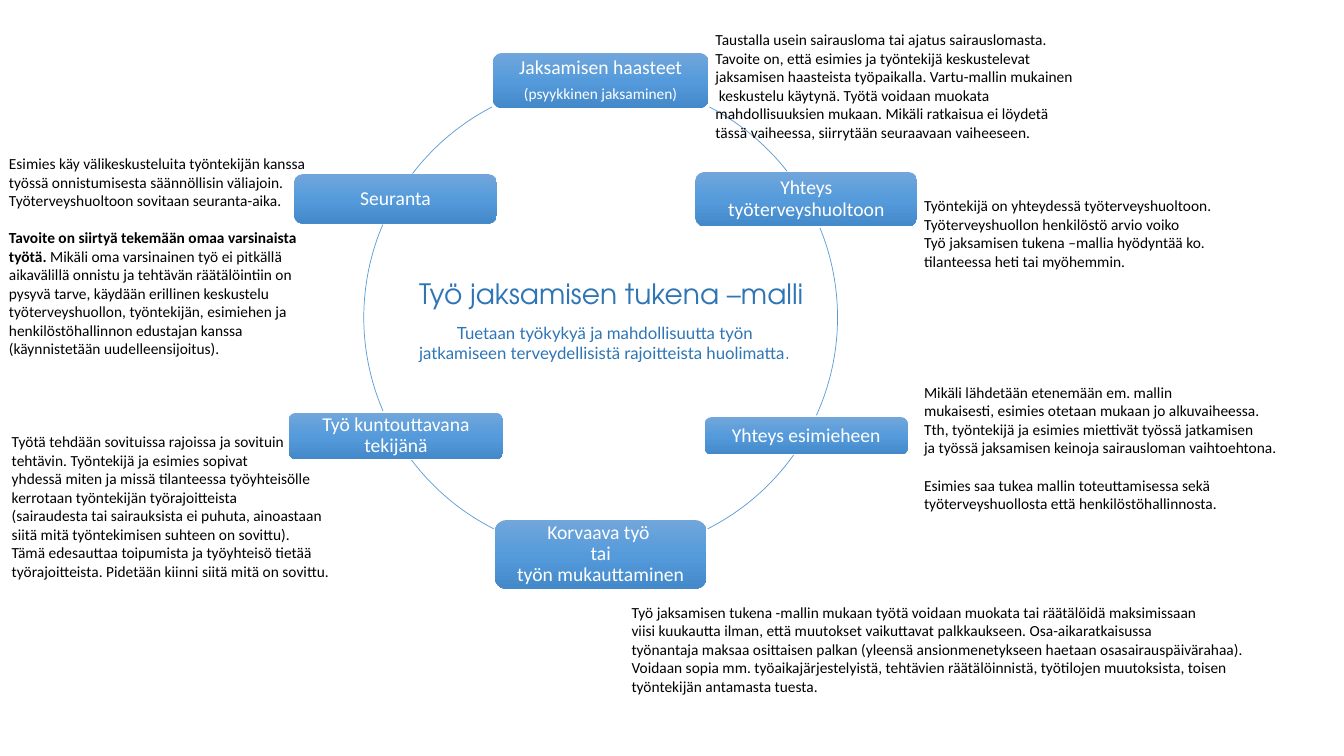
from copy import deepcopy
from dataclasses import dataclass

from lxml.etree import SubElement
from pptx import Presentation
from pptx.dml.color import RGBColor
from pptx.enum.shapes import MSO_SHAPE
from pptx.enum.text import MSO_ANCHOR, PP_ALIGN
from pptx.oxml.ns import qn
from pptx.util import Pt


@dataclass(frozen=True)
class Theme:
    gradient: tuple = ((0, "71A6DB"), (0.5, "559BDB"), (1, "448ACA"))
    ring: str = "5B9BD5"
    # Style: font, size, colour, bold
    step: tuple = ("Calibri", 14, "FFFFFF", False)
    step_detail: tuple = ("Calibri", 11, "FFFFFF", False)
    note: tuple = ("Calibri", 11, "000000", False)
    note_bold: tuple = ("Calibri", 11, "000000", True)
    title: tuple = ("TeX Gyre Adventor", 20, "2E75B6", False)
    subtitle: tuple = ("Lato", 12, "2E75B6", False)
    subtitle_end: tuple = ("TeX Gyre Adventor", 12, "2E75B6", False)


class CycleSlide:
    def __init__(self, slide, theme):
        self.slide = slide
        self.theme = theme

    def add_runs(self, paragraph, runs, **layout):
        """Add (text, style) runs; a newline in a text is a line break."""
        for name, value in layout.items():
            setattr(paragraph, name, value)
        for text, style in runs:
            face, size, color, bold = style
            for number, line in enumerate(text.split("\n")):
                if number:
                    paragraph.add_line_break()
                    line_break = paragraph._p.findall(qn("a:br"))[-1]
                    SubElement(line_break, qn("a:rPr"), sz=str(size * 100))
                run = paragraph.add_run()
                run.text = line
                formats = {"name": face, "size": Pt(size), "bold": bold}
                for name, value in formats.items():
                    setattr(run.font, name, value)
                run.font.color.rgb = RGBColor.from_string(color)

    def paragraphs(self, frame, count):
        return [frame.paragraphs[0]] + [frame.add_paragraph() for _ in range(count - 1)]

    def arc(self, box, start, end):
        arc = self.slide.shapes.add_shape(MSO_SHAPE.ARC, *map(Pt, box))
        arc.shadow.inherit = False
        arc.fill.background()
        arc.line.color.rgb = RGBColor.from_string(self.theme.ring)
        arc.line.width = Pt(0.5)
        # Angles are stored in 60000ths of a degree, adjustments in 100000ths
        for index, angle in enumerate((start, end)):
            arc.adjustments[index] = angle * 0.6

    def step(self, box, lines):
        step = self.slide.shapes.add_shape(MSO_SHAPE.ROUNDED_RECTANGLE, *map(Pt, box))
        step.shadow.inherit = False
        step.line.fill.background()
        step.fill.gradient()
        step.fill.gradient_angle = 270
        stop_list = next(step._element.iter(qn("a:gsLst")))
        stop_list.insert(1, deepcopy(stop_list[0]))
        for stop, (position, color) in zip(step.fill.gradient_stops, self.theme.gradient):
            stop.position = position
            stop.color.rgb = RGBColor.from_string(color)
        frame = step.text_frame
        formats = {"word_wrap": True, "vertical_anchor": MSO_ANCHOR.MIDDLE,
                   "margin_left": Pt(6.5), "margin_right": Pt(6.5),
                   "margin_top": Pt(1), "margin_bottom": Pt(1)}
        for name, value in formats.items():
            setattr(frame, name, value)
        styles = (self.theme.step, self.theme.step_detail)
        rows = self.paragraphs(frame, len(lines))
        for number, (row, line, style) in enumerate(zip(rows, lines, styles), 1):
            self.add_runs(row, [(line, style)], alignment=PP_ALIGN.CENTER, line_spacing=0.9,
                          space_after=Pt(5 if number < len(lines) else 0))

    def text_frame(self, box):
        frame = self.slide.shapes.add_textbox(*map(Pt, box)).text_frame
        frame.word_wrap = True
        return frame

    def note(self, box, blocks):
        """Set blocks of paragraphs one line apart."""
        rows = iter(self.paragraphs(self.text_frame(box), sum(map(len, blocks))))
        for block_number, block in enumerate(blocks):
            for number, content in enumerate(block):
                runs = [(content, self.theme.note)] if isinstance(content, str) else content
                gap = 13.4 if block_number and not number else 0
                self.add_runs(next(rows), runs, space_before=Pt(gap))

    def heading(self, box, title, subtitle, ending):
        title_row, subtitle_row = self.paragraphs(self.text_frame(box), 2)
        self.add_runs(title_row, [(title, self.theme.title)])
        subtitle_row._p.get_or_add_pPr().set("indent", str(Pt(27)))
        self.add_runs(subtitle_row, [(subtitle, self.theme.subtitle),
                                     (ending, self.theme.subtitle_end)], space_before=Pt(9))


THEME = Theme()
RING = (259.9, 57.6, 338.4, 338.4)

# Clockwise: step box, step text, and the arc that leads on from it
STEPS = [
    ((352.1, 37.8, 154.1, 39.4), ["Jaksamisen haasteet", "(psyykkinen jaksaminen)"], (297.3, 321.9)),
    ((496.8, 122.8, 158.4, 38.9), ["Yhteys työterveyshuoltoon"], (337.8, 24.4)),
    ((503.6, 298, 144.7, 26.6), ["Yhteys esimieheen"], (35.5, 63.2)),
    ((353.5, 371.5, 151.2, 49), ["Korvaava työ \ntai\ntyön mukauttaminen"], (116.8, 143)),
    ((206.2, 294.8, 153.4, 33.3), ["Työ kuntouttavana tekijänä"], (156.7, 203.1)),
    ((210.2, 124.4, 144.7, 35.3), ["Seuranta"], (217.4, 242.7)),
]

NOTES = [
    ((504, 18, 272, 87), [[
        "Taustalla usein sairausloma tai ajatus sairauslomasta.",
        "Tavoite on, että esimies ja työntekijä keskustelevat \n"
        "jaksamisen haasteista työpaikalla. Vartu-mallin mukainen\n"
        " keskustelu käytynä. Työtä voidaan muokata",
        "mahdollisuuksien mukaan. Mikäli ratkaisua ei löydetä",
        "tässä vaiheessa, siirrytään seuraavaan vaiheeseen."]]),
    ((653, 136.8, 222.5, 60.5), [[
        "Työntekijä on yhteydessä työterveyshuoltoon.",
        "Työterveyshuollon henkilöstö arvio voiko\n"
        "Työ jaksamisen tukena –mallia hyödyntää ko.\n"
        "tilanteessa heti tai myöhemmin."]]),
    ((653, 270, 273.6, 100.8), [[
        "Mikäli lähdetään etenemään em. mallin",
        "mukaisesti, esimies otetaan mukaan jo alkuvaiheessa.",
        "Tth, työntekijä ja esimies miettivät työssä jatkamisen\n"
        "ja työssä jaksamisen keinoja sairausloman vaihtoehtona."], [
        "Esimies saa tukea mallin toteuttamisessa sekä \n"
        "työterveyshuollosta että henkilöstöhallinnosta."]]),
    ((444, 427, 455, 74), [[
        "Työ jaksamisen tukena -mallin mukaan työtä voidaan muokata tai räätälöidä maksimissaan \n"
        "viisi kuukautta ilman, että muutokset vaikuttavat palkkaukseen. Osa-aikaratkaisussa\n"
        "työnantaja maksaa osittaisen palkan (yleensä ansionmenetykseen haetaan osasairauspäivärahaa).",
        "Voidaan sopia mm. työaikajärjestelyistä, tehtävien räätälöinnistä, työtilojen muutoksista, toisen \n"
        "työntekijän antamasta tuesta."]]),
    ((1.3, 305.3, 243.4, 113.8), [[
        "Työtä tehdään sovituissa rajoissa ja sovituin\n"
        "tehtävin. Työntekijä ja esimies sopivat",
        "yhdessä miten ja missä tilanteessa työyhteisölle\n"
        "kerrotaan työntekijän työrajoitteista",
        "(sairaudesta tai sairauksista ei puhuta, ainoastaan\n"
        "siitä mitä työntekimisen suhteen on sovittu).",
        "Tämä edesauttaa toipumista ja työyhteisö tietää\n"
        "työrajoitteista. Pidetään kiinni siitä mitä on sovittu."]]),
    ((-0.7, 106.6, 229, 154), [[
        "Esimies käy välikeskusteluita työntekijän kanssa",
        "työssä onnistumisesta säännöllisin väliajoin.\n"
        "Työterveyshuoltoon sovitaan seuranta-aika."], [[
            ("Tavoite on siirtyä tekemään omaa varsinaista\ntyötä. ", THEME.note_bold),
            ("Mikäli oma varsinainen työ ei pitkällä \n"
             "aikavälillä onnistu ja tehtävän räätälöintiin on \n"
             "pysyvä tarve, käydään erillinen keskustelu\n"
             "työterveyshuollon, työntekijän, esimiehen ja \n"
             "henkilöstöhallinnon edustajan kanssa\n"
             "(käynnistetään uudelleensijoitus).", THEME.note)]]]),
]


def main():
    deck = Presentation()
    deck.slide_width, deck.slide_height = Pt(960), Pt(540)
    cycle = CycleSlide(deck.slides.add_slide(deck.slide_layouts[6]), THEME)

    # Ring of steps
    for box, lines, (start, end) in STEPS:
        cycle.step(box, lines)
        cycle.arc(RING, start, end)

    # Explanations around the ring
    for box, blocks in NOTES:
        cycle.note(box, blocks)

    # Heading in the middle
    cycle.heading((292.3, 193.7, 297.4, 70.6), "Työ jaksamisen tukena –malli",
                  "Tuetaan työkykyä ja mahdollisuutta työn \n"
                  "jatkamiseen terveydellisistä rajoitteista huolimatta", ".")
    deck.save("out.pptx")


if __name__ == "__main__":
    main()
